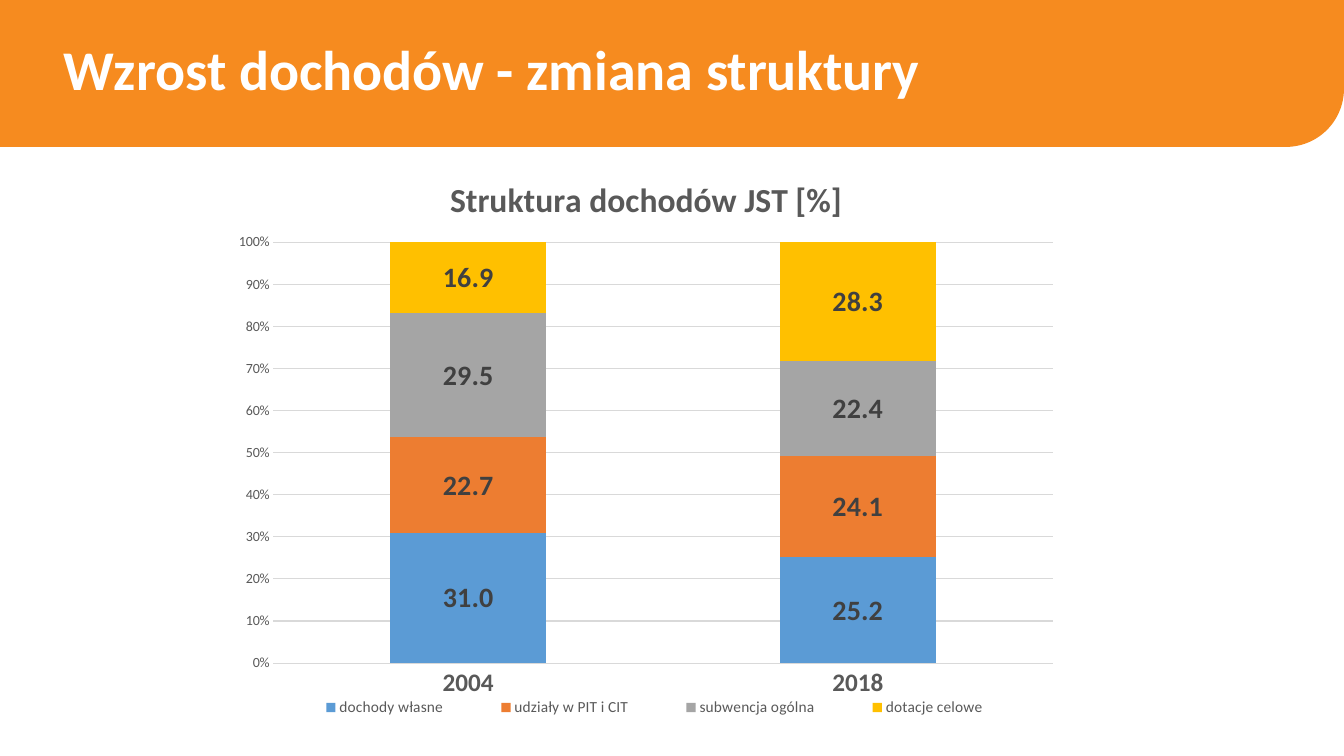
from lxml.etree import SubElement
from pptx import Presentation
from pptx.chart.data import CategoryChartData as ChartData
from pptx.dml.color import RGBColor
from pptx.enum.chart import XL_CHART_TYPE as Kind
from pptx.enum.chart import XL_LEGEND_POSITION as Place
from pptx.enum.chart import XL_TICK_MARK as Tick
from pptx.enum.shapes import MSO_SHAPE as Shape
from pptx.enum.text import MSO_ANCHOR as Anchor
from pptx.oxml.ns import qn
from pptx.util import Pt

WHITE = RGBColor(0xFF, 0xFF, 0xFF)
ORANGE = RGBColor(0xF6, 0x8B, 0x1F)
GREY = RGBColor(0x59, 0x59, 0x59)
DARK = RGBColor(0x40, 0x40, 0x40)
PALE = RGBColor(0xD9, 0xD9, 0xD9)
BLUE = RGBColor(0x5B, 0x9B, 0xD5)
RUST = RGBColor(0xED, 0x7D, 0x31)
SILVER = RGBColor(0xA5, 0xA5, 0xA5)
GOLD = RGBColor(0xFF, 0xC0, 0x00)

YEARS = ["2004", "2018"]
INCOME = [
    ("dochody własne", (31.0, 25.2), BLUE),
    ("udziały w PIT i CIT", (22.7, 24.1), RUST),
    ("subwencja ogólna", (29.5, 22.4), SILVER),
    ("dotacje celowe", (16.9, 28.3), GOLD),
]


class Painter:
    def __init__(self, slide, face="Calibri"):
        self.slide = slide
        self.face = face

    def style(self, font, size, color, bold=False):
        font.name = self.face
        font.size = Pt(size)
        font.bold = bold
        font.color.rgb = color

    def banner(self, box, color, curve):
        shape = self.slide.shapes.add_shape(Shape.ROUND_1_RECTANGLE, *map(Pt, box))
        shape.adjustments[0] = curve
        shape.shadow.inherit = False
        shape.fill.solid()
        shape.fill.fore_color.rgb = color
        shape.line.fill.background()
        # The round corner belongs at the bottom
        shape._element.spPr.find(qn("a:xfrm")).set("flipV", "1")

    def title(self, box, text, size, color):
        frame = self.slide.shapes.add_textbox(*map(Pt, box)).text_frame
        frame.word_wrap = True
        frame.vertical_anchor = Anchor.MIDDLE
        frame.text = text
        self.style(frame.paragraphs[0].runs[0].font, size, color, True)

    def layout(self, parent, index, target, **sides):
        for old in parent.findall(qn("c:layout")):
            parent.remove(old)
        outer = parent.makeelement(qn("c:layout"), {})
        parent.insert(index, outer)
        manual = SubElement(outer, qn("c:manualLayout"))
        if target:
            SubElement(manual, qn("c:layoutTarget"), val=target)
        for side in "xy":
            SubElement(manual, qn(f"c:{side}Mode"), val="edge")
        for side, share in sides.items():
            SubElement(manual, qn(f"c:{side}"), val=str(share))

    def chart(self, box, title, years, series):
        data = ChartData(number_format="0.0")
        data.categories = years
        for name, values, _ in series:
            data.add_series(name, values)
        chart = self.slide.shapes.add_chart(
            Kind.COLUMN_STACKED_100, *map(Pt, box), data).chart
        self.style(chart.font, 10, GREY)

        # Chart title
        frame = chart.chart_title.text_frame
        frame.text = title
        self.style(frame.paragraphs[0].runs[0].font, 24, GREY, True)
        chart.chart_title.include_in_layout = False

        # Columns and labels
        plot = chart.plots[0]
        plot.gap_width = 150
        plot.overlap = 100
        plot.vary_by_categories = False
        for part, (_, _, color) in zip(plot.series, series):
            part.format.fill.solid()
            part.format.fill.fore_color.rgb = color
            labels = part.data_labels
            labels.show_value = True
            labels.number_format = "0.0"
            labels.number_format_is_linked = False
            self.style(labels.font, 20, DARK, True)

        # Axes
        years_axis, share_axis = chart.category_axis, chart.value_axis
        for axis in (years_axis, share_axis):
            axis.major_tick_mark = axis.minor_tick_mark = Tick.NONE
        self.style(years_axis.tick_labels.font, 18, GREY, True)
        self.style(share_axis.tick_labels.font, 10, GREY)
        share_axis.tick_labels.number_format = "0%"
        share_axis.tick_labels.number_format_is_linked = False
        share_axis.format.line.fill.background()
        for line in (years_axis.format.line, share_axis.major_gridlines.format.line):
            line.color.rgb = PALE
            line.width = Pt(0.75)

        # Legend and plot area
        chart.has_legend = True
        legend = chart.legend
        legend.position = Place.BOTTOM
        legend.include_in_layout = False
        self.style(legend.font, 11, GREY)
        self.layout(legend._element, 1, None, x=0.06, y=0.91, w=0.9, h=0.05)
        area = chart._chartSpace.chart.plotArea
        self.layout(area, 0, "inner", x=0.06, y=0.15, w=0.92, h=0.71)


def main():
    deck = Presentation()
    deck.slide_width, deck.slide_height = Pt(960), Pt(540)
    slide = deck.slides.add_slide(deck.slide_layouts[6])
    pen = Painter(slide)

    # Heading
    pen.banner((0, 0, 960, 105), ORANGE, 0.395)
    pen.title((38, 21, 711, 55.5), "Wzrost dochodów - zmiana struktury", 40, WHITE)

    # Income structure
    pen.chart((159, 109.5, 605, 423.5), "Struktura dochodów JST [%]", YEARS, INCOME)

    deck.save("out.pptx")


if __name__ == "__main__":
    main()
